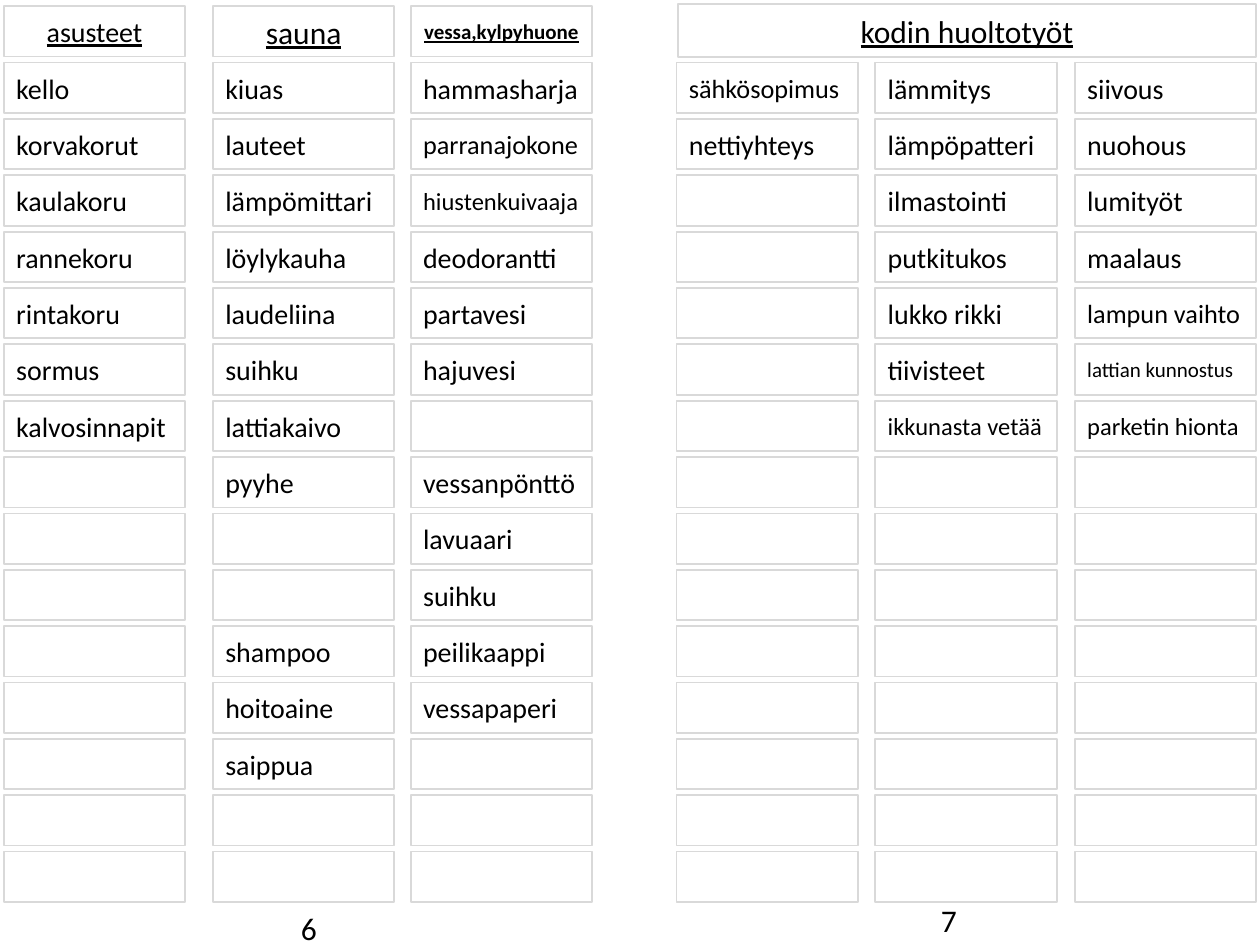
"""Builds a two-page spread of Finnish household vocabulary lists."""
from pptx import Presentation
from pptx.dml.color import RGBColor
from pptx.enum.shapes import MSO_SHAPE as Shape
from pptx.enum.text import MSO_ANCHOR as Anchor, MSO_AUTO_SIZE as AutoSize, PP_ALIGN as Align
from pptx.util import Pt

BLACK = RGBColor(0x00, 0x00, 0x00)
GRAY = RGBColor(0xD9, 0xD9, 0xD9)
FONT = "Calibri"
CELL_WIDTH, CELL_HEIGHT = 103.7, 28.8
HEADER_TOP, FIRST_ROW_TOP, ROW_STEP, ROW_COUNT = 3.6, 35.8, 32.2, 15
WORD_SIZE, LARGE_SIZE = 16, 18

HEADERS = [
    ("asusteet", 2.2, HEADER_TOP, CELL_WIDTH, CELL_HEIGHT, WORD_SIZE, False),
    ("sauna", 121.7, HEADER_TOP, CELL_WIDTH, CELL_HEIGHT, LARGE_SIZE, False),
    ("vessa,kylpyhuone", 234.7, HEADER_TOP, CELL_WIDTH, CELL_HEIGHT, 12, True),
    ("kodin huoltotyöt", 387.3, 2.3, 330.5, 30.2, LARGE_SIZE, False),
]
COLUMNS = [
    (2.2, ["kello", "korvakorut", "kaulakoru", "rannekoru", "rintakoru", "sormus",
           "kalvosinnapit"]),
    (121.7, ["kiuas", "lauteet", "lämpömittari", "löylykauha", "laudeliina", "suihku",
             "lattiakaivo", "pyyhe", "", "", "shampoo", "hoitoaine", "saippua"]),
    (234.7, ["hammasharja", "parranajokone", "hiustenkuivaaja", "deodorantti", "partavesi",
             "hajuvesi", "", "vessanpönttö", "lavuaari", "suihku", "peilikaappi",
             "vessapaperi"]),
    (386.6, ["sähkösopimus", "nettiyhteys"]),
    (500.2, ["lämmitys", "lämpöpatteri", "ilmastointi", "putkitukos", "lukko rikki",
             "tiivisteet", "ikkunasta vetää"]),
    (614.2, ["siivous", "nuohous", "lumityöt", "maalaus", "lampun vaihto",
             "lattian kunnostus", "parketin hionta"]),
]
SMALLER_WORDS = {
    "parranajokone": 15, "sähkösopimus": 15, "lampun vaihto": 15,
    "hiustenkuivaaja": 14, "ikkunasta vetää": 14, "parketin hionta": 14,
    "lattian kunnostus": 12,
}
PAGE_NUMBERS = [("6", 164.9, 516.2), ("7", 530.6, 511.2)]


def write_text(shape, text, size, align=Align.LEFT):
    """Put one line of text in a shape and return its font."""
    paragraph = shape.text_frame.paragraphs[0]
    paragraph.text = text
    paragraph.alignment = align
    font = paragraph.font
    font.name, font.size = FONT, Pt(size)
    font.color.rgb = BLACK
    return font


def add_cell(slide, left, top, width=CELL_WIDTH, height=CELL_HEIGHT):
    """Add an outlined, unfilled box."""
    cell = slide.shapes.add_shape(Shape.RECTANGLE, Pt(left), Pt(top), Pt(width), Pt(height))
    cell.shadow.inherit = False
    cell.fill.background()
    cell.line.color.rgb = GRAY
    cell.line.width = Pt(1)
    cell.text_frame.vertical_anchor = Anchor.MIDDLE
    return cell


def add_header(slide, text, left, top, width, height, size, bold):
    """Add a box with a centred, underlined heading."""
    cell = add_cell(slide, left, top, width, height)
    font = write_text(cell, text, size, Align.CENTER)
    font.underline = True
    font.bold = bold


def add_column(slide, left, words):
    """Add a full column of boxes, the rows without a word left empty."""
    for row in range(ROW_COUNT):
        cell = add_cell(slide, left, FIRST_ROW_TOP + row * ROW_STEP)
        if row < len(words) and words[row]:
            write_text(cell, words[row], SMALLER_WORDS.get(words[row], WORD_SIZE))


def add_page_number(slide, text, left, top):
    """Add a page number below the columns."""
    box = slide.shapes.add_textbox(Pt(left), Pt(top), Pt(25.9), Pt(CELL_HEIGHT))
    box.text_frame.word_wrap = True
    box.text_frame.auto_size = AutoSize.SHAPE_TO_FIT_TEXT
    write_text(box, text, LARGE_SIZE)


def main():
    """Build and save the slide."""
    presentation = Presentation()
    presentation.slide_width, presentation.slide_height = Pt(720), Pt(540)
    slide = presentation.slides.add_slide(presentation.slide_layouts[6])
    for header in HEADERS:
        add_header(slide, *header)
    for left, words in COLUMNS:
        add_column(slide, left, words)
    for page_number in PAGE_NUMBERS:
        add_page_number(slide, *page_number)
    presentation.save("out.pptx")


if __name__ == "__main__":
    main()
